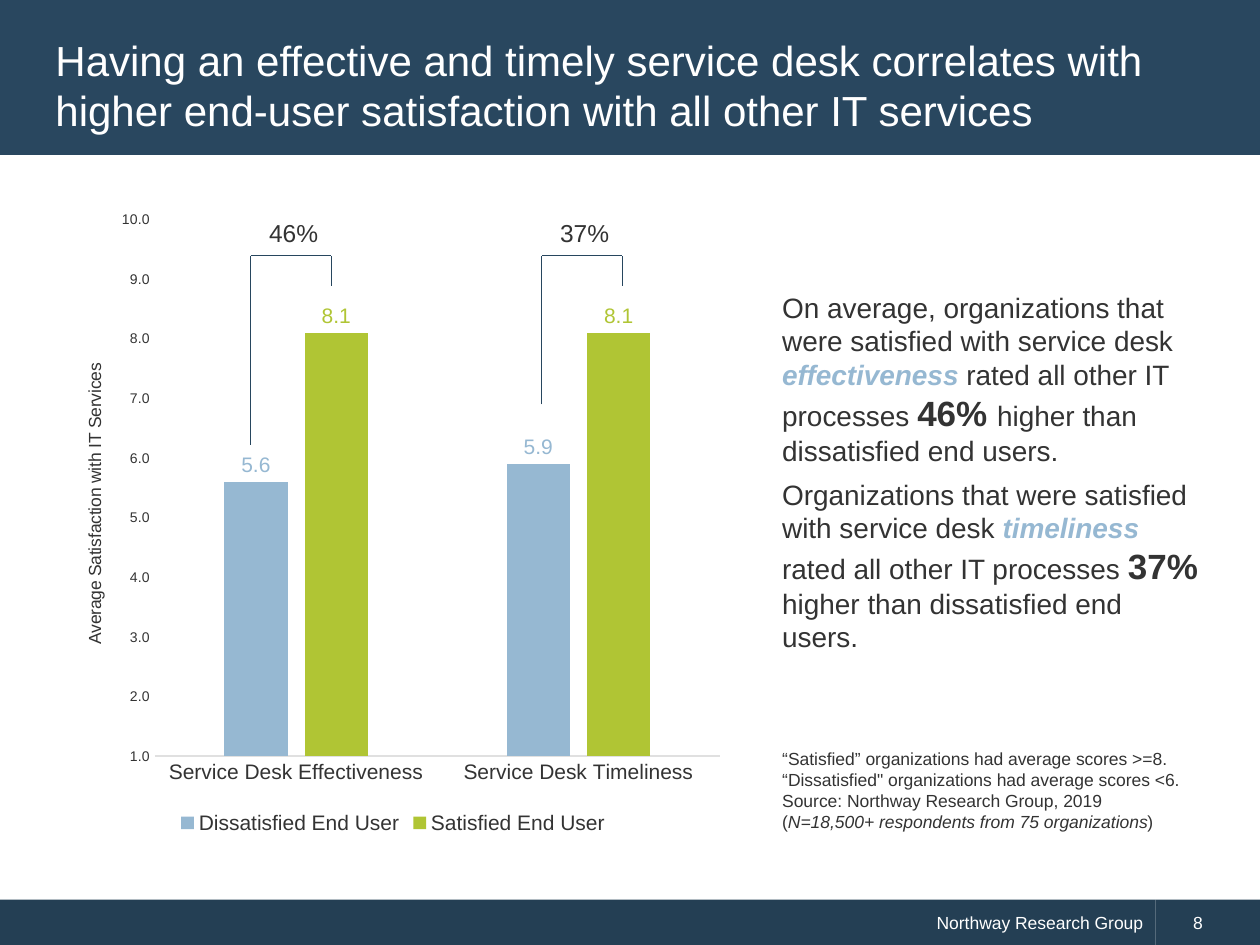
import pptx
import pptx.chart.data
import pptx.dml.color
import pptx.enum.chart
import pptx.enum.shapes
import pptx.enum.text
import pptx.oxml.ns
import pptx.oxml.xmlchemy
import pptx.util

Inches, Pt = pptx.util.Inches, pptx.util.Pt
rgb = pptx.dml.color.RGBColor.from_string
qn = pptx.oxml.ns.qn
new_element = pptx.oxml.xmlchemy.OxmlElement
Align, Anchor = pptx.enum.text.PP_ALIGN, pptx.enum.text.MSO_ANCHOR
AutoSize = pptx.enum.text.MSO_AUTO_SIZE
chart_enum = pptx.enum.chart

THEME = {
    "font": "Arial",
    "header": "29475F", "footer": "243F54", "bracket": "27465E", "axis": "E0E0E0",
    "text": "333333", "light": "FFFFFF", "blue": "96B8D2", "green": "B0C534",
    "title": 24, "big": 20, "body": 16, "gap": 14, "label": 12, "small": 10, "tick": 8,
}


def style_font(font, size, color="text", **values):
    font.color.rgb = rgb(THEME[color])
    values = {"name": THEME["font"], "size": Pt(THEME[size]), **values}
    for name, value in values.items():
        setattr(font, name, value)


def write_text(box, paragraphs, frame_format, para_format, **base):
    """Fill a box with paragraphs, each a list of (text, font changes) spans."""
    frame = box.text_frame
    for name, value in {"word_wrap": True, **frame_format}.items():
        setattr(frame, name, value)
    for index, spans in enumerate(paragraphs):
        para = frame.add_paragraph() if index else frame.paragraphs[0]
        for name, value in para_format.items():
            setattr(para, name, value)
        for text, changes in spans:
            span = para.add_run()
            span.text = text
            style_font(span.font, **{**base, **changes})


deck = pptx.Presentation()
deck.slide_width, deck.slide_height = Inches(10), Inches(7.5)
page = deck.slides.add_slide(deck.slide_layouts[5])
shapes = page.shapes

# Header and footer bands
bands = [
    (0, 7.14, 9.17, 0.37, "footer", "Northway Research Group", Align.RIGHT, 0.1),
    (9.17, 7.14, 0.83, 0.37, "footer", "8", Align.LEFT, 0.3),
    (0, 0, 10, 1.23, "header", "", Align.LEFT, 0.1),
]
for left, top, width, height, color, text, align, margin in bands:
    band = shapes.add_shape(pptx.enum.shapes.MSO_SHAPE.RECTANGLE,
                            Inches(left), Inches(top), Inches(width), Inches(height))
    band.shadow.inherit = False
    band.fill.solid()
    band.fill.fore_color.rgb = rgb(THEME[color])
    band.line.fill.background()
    if text:
        write_text(band, [[(text, {})]],
                   {"vertical_anchor": Anchor.MIDDLE, "margin_left": Inches(margin)},
                   {"alignment": align}, size="small", color="light")

# Title, brought in front of the header band
title = shapes.title
title.left, title.top, title.width, title.height = map(Inches, (0.34, 0.19, 9.43, 0.96))
title.element.getparent().append(title.element)
headline = ("Having an effective and timely service desk correlates with "
            "higher end-user satisfaction with all other IT services")
write_text(title, [[(headline, {})]],
           {"vertical_anchor": Anchor.MIDDLE, "auto_size": AutoSize.NONE},
           {"alignment": Align.LEFT}, size="title", color="light")

# Findings
accent = {"color": "blue", "bold": True, "italic": True}
figure = {"size": "big", "bold": True}
findings = [
    ("On average, organizations that were satisfied with service desk ", "effectiveness ", "46% "),
    ("Organizations that were satisfied with service desk ", "timeliness ", "37% "),
]
box = shapes.add_textbox(Inches(6.11), Inches(2.24), Inches(3.5), Inches(3.01))
write_text(box, [[(opening, {}), (topic, accent), ("rated all other IT processes ", {}),
                  (percent, figure), ("higher than dissatisfied end users.", {})]
                 for opening, topic, percent in findings],
           {"vertical_anchor": Anchor.MIDDLE, "auto_size": AutoSize.SHAPE_TO_FIT_TEXT},
           {"space_before": Pt(3), "space_after": Pt(3)}, size="body")

# Column chart
chart_data = pptx.chart.data.CategoryChartData(number_format="0.0")
chart_data.categories = ["Service Desk Effectiveness", "Service Desk Timeliness"]
chart_data.add_series("Dissatisfied End User", (5.6, 5.9))
chart_data.add_series("Satisfied End User", (8.1, 8.1))
chart = shapes.add_chart(chart_enum.XL_CHART_TYPE.COLUMN_CLUSTERED, Inches(0.42), Inches(1.59),
                         Inches(5.4), Inches(5.07), chart_data).chart
style_font(chart.font, "tick")
chart.has_title = False
chart.has_legend = True
chart.legend.position = chart_enum.XL_LEGEND_POSITION.BOTTOM
chart.legend.include_in_layout = False
style_font(chart.legend.font, "label")

plot = chart.plots[0]
plot.gap_width, plot.overlap, plot.vary_by_categories = 219, -27, False
for series, color in zip(plot.series, ("blue", "green")):
    series.format.fill.solid()
    series.format.fill.fore_color.rgb = rgb(THEME[color])
    labels = series.data_labels
    label_format = {"show_value": True, "number_format": "0.0", "number_format_is_linked": False,
                    "position": chart_enum.XL_LABEL_POSITION.OUTSIDE_END}
    for name, value in label_format.items():
        setattr(labels, name, value)
    style_font(labels.font, "label", color)

categories, scores = chart.category_axis, chart.value_axis
for axis, size in ((categories, "label"), (scores, "tick")):
    axis.has_major_gridlines = False
    axis.major_tick_mark = axis.minor_tick_mark = chart_enum.XL_TICK_MARK.NONE
    style_font(axis.tick_labels.font, size)
categories.format.line.color.rgb = rgb(THEME["axis"])
categories.format.line.width = Pt(0.75)
scores.format.line.fill.background()
scores.minimum_scale, scores.maximum_scale, scores.major_unit = 1, 10, 1
scores.tick_labels.number_format = "0.0"
scores.tick_labels.number_format_is_linked = False
axis_title = scores.axis_title
write_text(axis_title, [[("Average Satisfaction with IT Services", {})]], {}, {},
           size="small", bold=False)
axis_title.element.find(".//" + qn("a:bodyPr")).set("rot", "-5400000")

# Fixed places, as shares of the chart area, for the plot and the axis title
plot_area = chart.element.find(".//" + qn("c:plotArea"))
layouts = [
    (plot_area, 0, {"layoutTarget": "inner", "xMode": "edge", "yMode": "edge",
                    "x": 0.15, "y": 0.03, "w": 0.83, "h": 0.84}),
    (axis_title.element, 1, {"xMode": "edge", "yMode": "edge", "x": 0.04, "y": 0.25}),
]
for parent, position, settings in layouts:
    for old_layout in parent.findall(qn("c:layout")):
        parent.remove(old_layout)
    layout = new_element("c:layout")
    manual = new_element("c:manualLayout")
    layout.append(manual)
    for name, value in settings.items():
        setting = new_element("c:" + name)
        setting.set("val", str(value))
        manual.append(setting)
    parent.insert(position, layout)

# Brackets that show the gap between each pair of columns
bracket_top, bracket_width = 2.03, 0.64
for left, foot, percent in ((4.3, 3.21, "37%"), (1.99, 3.53, "46%")):
    right = left + bracket_width
    for x1, y1, x2, y2 in ((left, foot, left, bracket_top),
                           (left, bracket_top, right, bracket_top),
                           (right, 2.27, right, bracket_top)):
        line = shapes.add_connector(pptx.enum.shapes.MSO_CONNECTOR.STRAIGHT,
                                    Inches(x1), Inches(y1), Inches(x2), Inches(y2))
        line.line.color.rgb = rgb(THEME["bracket"])
        line.line.width = Pt(0.75)
        line.element.spPr.append(new_element("a:effectLst"))
    box = shapes.add_textbox(Inches(left - 0.12), Inches(1.68), Inches(0.92), Inches(0.34))
    write_text(box, [[(percent, {})]], {"auto_size": AutoSize.SHAPE_TO_FIT_TEXT},
               {"alignment": Align.CENTER}, size="gap")

# Source note
box = shapes.add_textbox(Inches(6.11), Inches(5.89), Inches(3.4), Inches(0.77))
write_text(box, [
    [("“Satisfied” organizations had average scores >=8.", {})],
    [("“Dissatisfied\" organizations had average scores <6.", {})],
    [("Source: Northway Research Group, 2019", {})],
    [("(", {}), ("N=18,500+ respondents from 75 organizations", {"italic": True}), (")", {})],
], {"auto_size": AutoSize.SHAPE_TO_FIT_TEXT}, {}, size="small")

deck.save("out.pptx")
